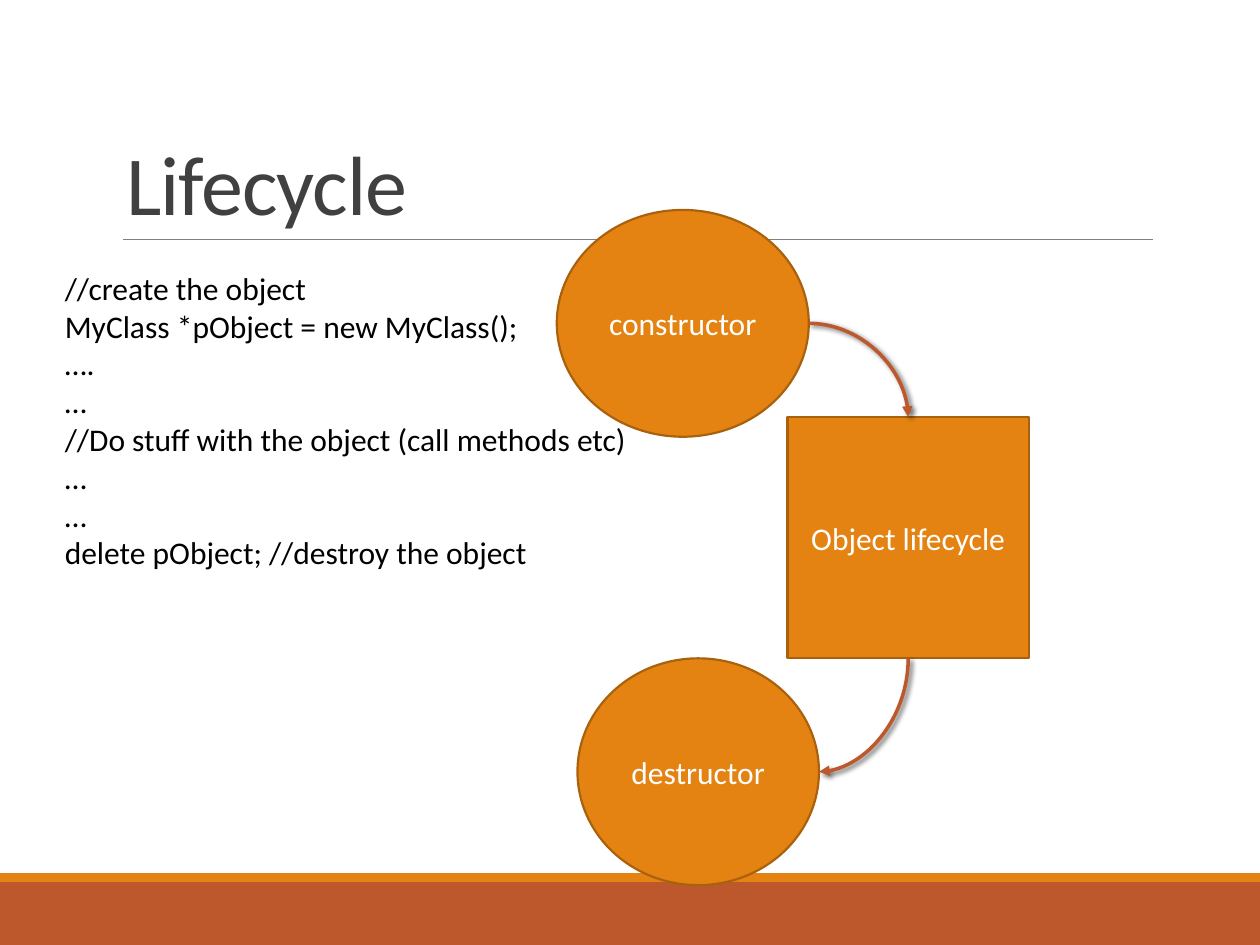
import pptx
import pptx.util
import pptx.dml.color
import pptx.enum.shapes
import pptx.enum.text
import pptx.oxml
import pptx.oxml.ns

Pt = pptx.util.Pt
SHAPE = pptx.enum.shapes.MSO_SHAPE
ALIGN = pptx.enum.text.PP_ALIGN
ANCHOR = pptx.enum.text.MSO_ANCHOR

TITLE = "Lifecycle"
CODE_LINES = [
    "//create the object",
    "MyClass *pObject = new MyClass();",
    "….",
    "…",
    "//Do stuff with the object (call methods etc)",
    "…",
    "…",
    "delete pObject; //destroy the object",
]
STAGES = [
    ("constructor", SHAPE.OVAL, (318.2, 120, 144, 129.6)),
    ("Object lifecycle", SHAPE.RECTANGLE, (450, 238.2, 138, 138)),
    ("destructor", SHAPE.OVAL, (330, 376.2, 138, 129.6)),
]
BARS = [("rust", (0, 504, 720, 36)), ("orange", (0, 499, 720, 5))]

THEME = {
    "font": "Calibri",
    "title_size": 48,
    "body_size": 18,
    "title": "404040",
    "black": "000000",
    "white": "FFFFFF",
    "orange": "E48312",
    "outline": "A9610D",
    "rust": "BD582C",
    "rule": "808080",
}
NAMESPACE = pptx.oxml.ns.nsdecls("a")
NO_EFFECT = f"<a:effectLst {NAMESPACE}/>"
SHADOW = (
    f'<a:effectLst {NAMESPACE}><a:outerShdw blurRad="38100" dist="25400" dir="2700000" '
    'rotWithShape="0"><a:srgbClr val="000000"><a:alpha val="60000"/></a:srgbClr>'
    "</a:outerShdw></a:effectLst>"
)
ARROWHEAD = f'<a:tailEnd {NAMESPACE} type="triangle"/>'


def color(name):
    return pptx.dml.color.RGBColor.from_string(THEME[name])


def lengths(box):
    return [Pt(value) for value in box]


def add_run(paragraph, text, size, color_name):
    run = paragraph.add_run()
    run.text = text
    run.font.name = THEME["font"]
    run.font.size = Pt(THEME[size])
    run.font.color.rgb = color(color_name)
    return run


def add_filled_shape(slide, kind, box, fill, outline=None):
    shape = slide.shapes.add_shape(kind, *lengths(box))
    shape.shadow.inherit = False
    shape.fill.solid()
    shape.fill.fore_color.rgb = color(fill)
    if outline:
        shape.line.color.rgb = color(outline)
        shape.line.width = Pt(1.25)
    else:
        shape.line.fill.background()
    return shape


def add_line(slide, kind, box, color_name, width, effect):
    left, top, across, down = box
    ends = lengths((left, top, left + across, top + down))
    connector = slide.shapes.add_connector(kind, *ends)
    connector.line.color.rgb = color(color_name)
    connector.line.width = Pt(width)
    connector._element.spPr.append(pptx.oxml.parse_xml(effect))
    return connector


def add_curved_arrow(slide, start, end, turned):
    left, right = sorted((start[0], end[0]))
    across, down = right - left, end[1] - start[1]
    box = (left, start[1], across, down)
    if turned:
        middle_x, middle_y = left + across / 2, start[1] + down / 2
        box = (middle_x - down / 2, middle_y - across / 2, down, across)
    curve = pptx.enum.shapes.MSO_CONNECTOR.CURVE
    arrow = add_line(slide, curve, box, "rust", 2, SHADOW)
    properties = arrow._element.spPr
    properties.find(pptx.oxml.ns.qn("a:prstGeom")).set("prst", "curvedConnector2")
    if turned:
        properties.find(pptx.oxml.ns.qn("a:xfrm")).set("rot", "5400000")
    arrow.line._get_or_add_ln().append(pptx.oxml.parse_xml(ARROWHEAD))


def right_middle(box):
    left, top, width, height = box
    return left + width, top + height / 2


def add_title(slide):
    title = slide.shapes.title
    title.left, title.top, title.width, title.height = lengths((64.8, 22.3, 594, 114.5))
    frame = title.text_frame
    frame.vertical_anchor = ANCHOR.BOTTOM
    frame.auto_size = pptx.enum.text.MSO_AUTO_SIZE.NONE
    paragraph = frame.paragraphs[0]
    paragraph.alignment = ALIGN.LEFT
    paragraph.line_spacing = 0.85
    run = add_run(paragraph, TITLE, "title_size", "title")
    run.font._element.set("spc", "-50")


def add_code(slide):
    frame = slide.shapes.add_textbox(*lengths((30, 150, 354, 181.4))).text_frame
    frame.word_wrap = True
    for index, line in enumerate(CODE_LINES):
        paragraph = frame.add_paragraph() if index else frame.paragraphs[0]
        add_run(paragraph, line, "body_size", "black")


def add_stages(slide):
    for label, kind, box in STAGES:
        frame = add_filled_shape(slide, kind, box, "orange", "outline").text_frame
        frame.word_wrap = True
        frame.vertical_anchor = ANCHOR.MIDDLE
        paragraph = frame.paragraphs[0]
        paragraph.alignment = ALIGN.CENTER
        add_run(paragraph, label, "body_size", "white")
    constructor, lifecycle, destructor = [box for _, _, box in STAGES]
    left, top, width, height = lifecycle
    center = left + width / 2
    add_curved_arrow(slide, right_middle(constructor), (center, top), False)
    add_curved_arrow(slide, (center, top + height), right_middle(destructor), True)


def main():
    presentation = pptx.Presentation()
    presentation.slide_width, presentation.slide_height = Pt(720), Pt(540)
    slide = presentation.slides.add_slide(presentation.slide_layouts[5])
    for fill, box in BARS:
        add_filled_shape(slide, SHAPE.RECTANGLE, box, fill)
    straight = pptx.enum.shapes.MSO_CONNECTOR.STRAIGHT
    add_line(slide, straight, (70.5, 136.8, 588.3, 0), "rule", 0.5, NO_EFFECT)
    add_title(slide)
    add_code(slide)
    add_stages(slide)
    presentation.save("out.pptx")


if __name__ == "__main__":
    main()
